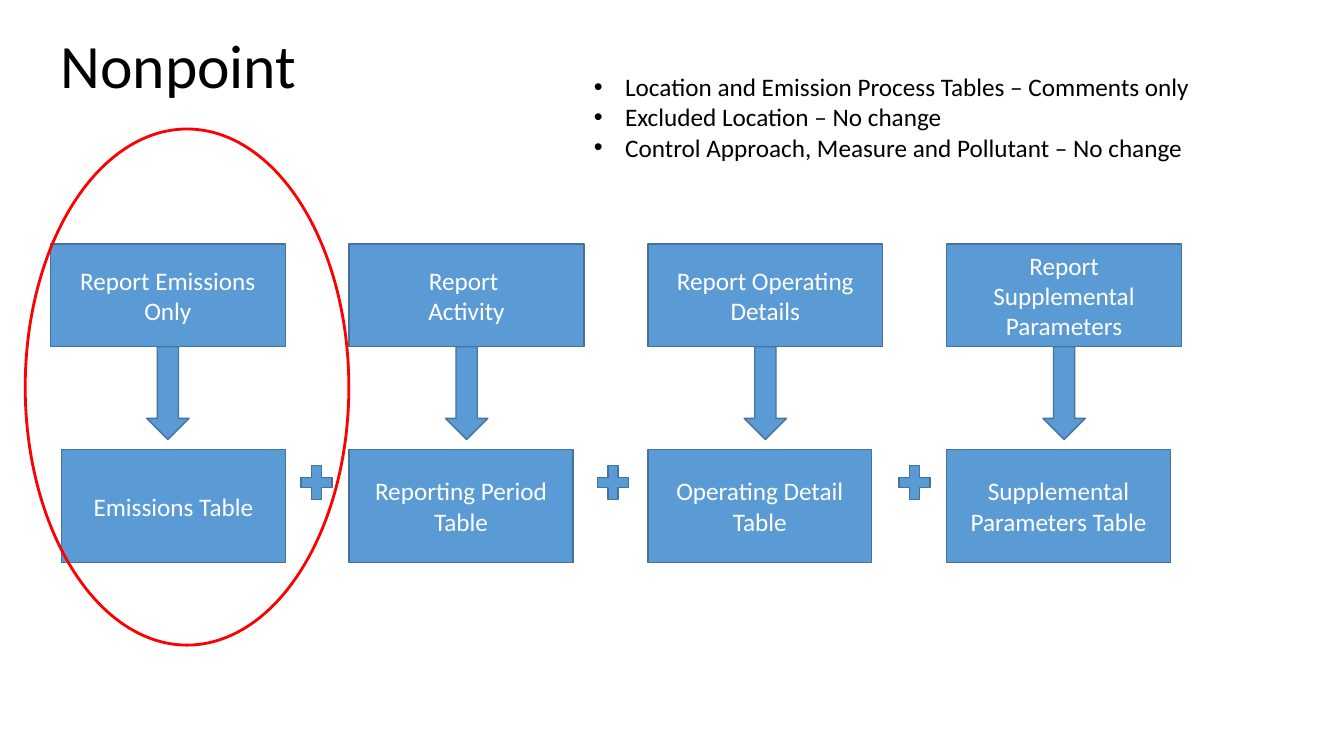
from dataclasses import dataclass

from pptx import Presentation
from pptx.dml.color import RGBColor
from pptx.enum.shapes import MSO_SHAPE
from pptx.enum.text import MSO_ANCHOR, MSO_AUTO_SIZE, PP_ALIGN
from pptx.util import Inches, Pt

RECTANGLE, ELLIPSE = MSO_SHAPE.RECTANGLE, MSO_SHAPE.OVAL
DOWN_ARROW, PLUS = MSO_SHAPE.DOWN_ARROW, MSO_SHAPE.MATH_PLUS
LEFT, CENTER = PP_ALIGN.LEFT, PP_ALIGN.CENTER
TOP, MIDDLE = MSO_ANCHOR.TOP, MSO_ANCHOR.MIDDLE

TITLE = "Nonpoint"
NOTES = [
    "Location and Emission Process Tables – Comments only",
    "Excluded Location – No change",
    "Control Approach, Measure and Pollutant – No change",
]
# What is reported, and the table it goes to
REPORTS = [
    ("Report Emissions Only", "Emissions Table"),
    ("Report \nActivity", "Reporting Period Table"),
    ("Report Operating Details", "Operating Detail Table"),
    ("Report Supplemental Parameters", "Supplemental Parameters Table"),
]


@dataclass(frozen=True)
class Theme:
    font: str = "Calibri"
    title_size: Pt = Pt(44)
    text_size: Pt = Pt(18)
    text: RGBColor = RGBColor(0, 0, 0)
    box_text: RGBColor = RGBColor(255, 255, 255)
    fill: RGBColor = RGBColor(0x5B, 0x9B, 0xD5)
    outline: RGBColor = RGBColor(0x43, 0x73, 0x9E)
    highlight: RGBColor = RGBColor(255, 0, 0)


THEME = Theme()

COLUMN_LEFT, COLUMN_PITCH = 0.5, 2.963
REPORT_TOP, REPORT_WIDTH, REPORT_HEIGHT = 2.42, 2.33, 1.02
TABLE_TOP, TABLE_WIDTH, TABLE_HEIGHT = 4.46, 2.22, 1.12
ARROW_WIDTH, ARROW_HEIGHT = 0.42, 0.92
PLUS_LEFTS, PLUS_TOP, PLUS_WIDTH, PLUS_HEIGHT = (2.93, 5.87, 8.86), 4.56, 0.42, 0.46


def write_text(shape, lines, size, color, alignment, anchor):
    frame = shape.text_frame
    frame.text = "\n".join(lines)
    frame.word_wrap = True
    frame.auto_size = MSO_AUTO_SIZE.NONE
    frame.vertical_anchor = anchor
    for paragraph in frame.paragraphs:
        paragraph.alignment = alignment
        paragraph.space_before = Pt(0)
        paragraph.font.name = THEME.font
        paragraph.font.size = size
        paragraph.font.color.rgb = color


def place(shape, left, top, width, height):
    shape.left, shape.top = Inches(left), Inches(top)
    shape.width, shape.height = Inches(width), Inches(height)


def add_blue_shape(slide, kind, left, top, width, height, label=None):
    shape = slide.shapes.add_shape(
        kind, Inches(left), Inches(top), Inches(width), Inches(height))
    shape.shadow.inherit = False
    shape.fill.solid()
    shape.fill.fore_color.rgb = THEME.fill
    shape.line.color.rgb = THEME.outline
    shape.line.width = Pt(1)
    if label:
        write_text(shape, [label], THEME.text_size, THEME.box_text, CENTER, MIDDLE)


def add_header(slide):
    title, notes = slide.shapes.title, slide.placeholders[1]
    place(title, 0.5, 0.3, 9, 1.25)
    write_text(title, [TITLE], THEME.title_size, THEME.text, LEFT, TOP)
    title.text_frame.paragraphs[0].line_spacing = 0.9

    place(notes, 5.79, 0.66, 6.18, 1.01)
    write_text(notes, NOTES, THEME.text_size, THEME.text, LEFT, TOP)
    for paragraph in notes.text_frame.paragraphs:
        properties = paragraph._p.get_or_add_pPr()
        properties.set("marL", str(Inches(0.31)))
        properties.set("indent", str(-Inches(0.31)))


def add_report_columns(slide):
    for column, (report, table) in enumerate(REPORTS):
        left = COLUMN_LEFT + column * COLUMN_PITCH
        # The first table lines up with its report on the right, the others on the left
        table_left = left if column else left + REPORT_WIDTH - TABLE_WIDTH
        arrow_left = left + (REPORT_WIDTH - ARROW_WIDTH) / 2
        add_blue_shape(slide, RECTANGLE, left, REPORT_TOP,
                       REPORT_WIDTH, REPORT_HEIGHT, report)
        add_blue_shape(slide, DOWN_ARROW, arrow_left, REPORT_TOP + REPORT_HEIGHT,
                       ARROW_WIDTH, ARROW_HEIGHT)
        add_blue_shape(slide, RECTANGLE, table_left, TABLE_TOP,
                       TABLE_WIDTH, TABLE_HEIGHT, table)
    for left in PLUS_LEFTS:
        add_blue_shape(slide, PLUS, left, PLUS_TOP, PLUS_WIDTH, PLUS_HEIGHT)


def add_highlight(slide):
    ring = slide.shapes.add_shape(
        ELLIPSE, Inches(0.25), Inches(1.28), Inches(3.21), Inches(5.12))
    ring.shadow.inherit = False
    ring.fill.background()
    ring.line.color.rgb = THEME.highlight
    ring.line.width = Pt(2)


def main():
    presentation = Presentation()
    presentation.slide_width = Inches(13.33)
    presentation.slide_height = Inches(7.5)
    slide = presentation.slides.add_slide(presentation.slide_layouts[1])
    add_header(slide)
    add_report_columns(slide)
    add_highlight(slide)
    presentation.save("out.pptx")


if __name__ == "__main__":
    main()
